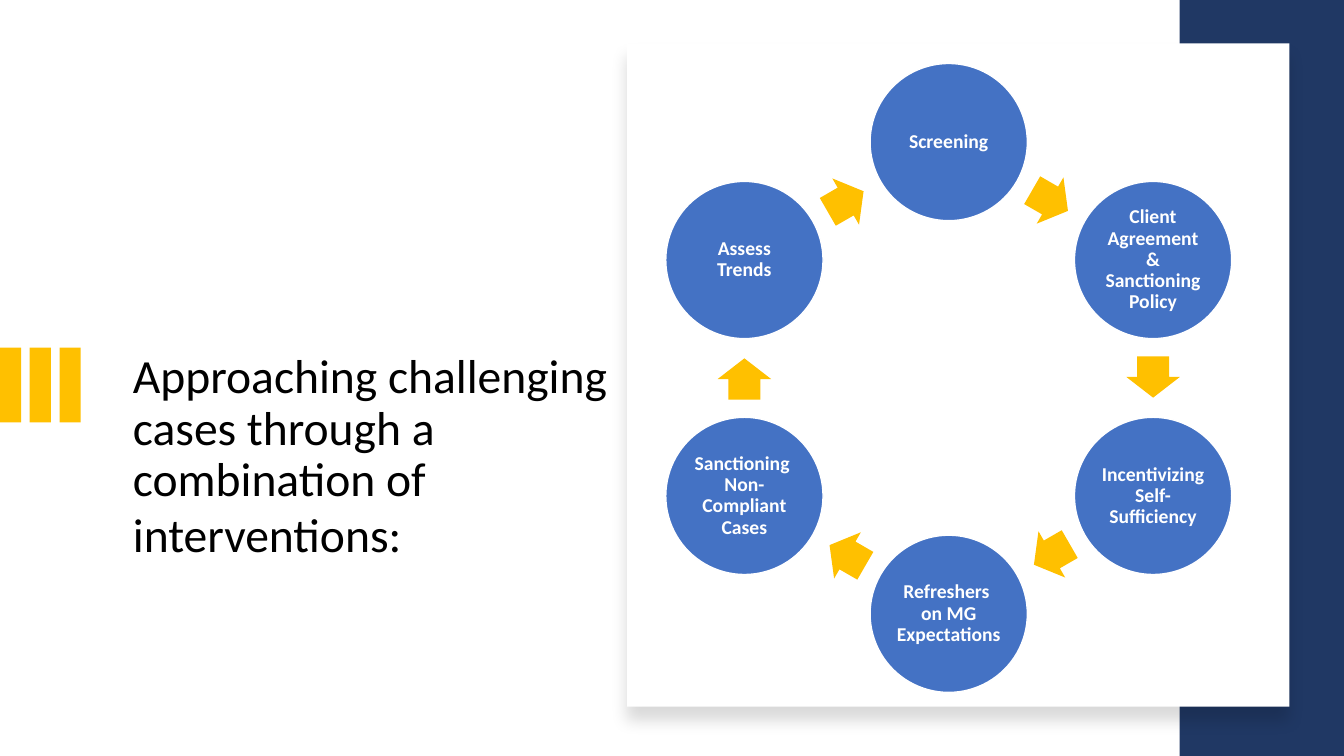
from dataclasses import dataclass
from math import cos, radians, sin

from lxml import etree
from pptx import Presentation
from pptx.dml.color import RGBColor
from pptx.enum.shapes import MSO_SHAPE
from pptx.enum.text import MSO_ANCHOR, PP_ALIGN
from pptx.oxml.ns import qn
from pptx.shapes.autoshape import Shape
from pptx.slide import Slide
from pptx.text.text import _Paragraph
from pptx.util import Inches, Pt

RECTANGLE = MSO_SHAPE.RECTANGLE
OVAL = MSO_SHAPE.OVAL
RIGHT_ARROW = MSO_SHAPE.RIGHT_ARROW
MIDDLE = MSO_ANCHOR.MIDDLE
TOP = MSO_ANCHOR.TOP
CENTER = PP_ALIGN.CENTER


@dataclass(frozen=True)
class Theme:
    font: str = "Calibri"
    white: str = "FFFFFF"
    black: str = "000000"
    navy: str = "203864"
    blue: str = "4472C4"
    gold: str = "FFC000"
    title_size: float = 34
    title_end_size: float = 38
    step_size: float = 14


@dataclass(frozen=True)
class Box:
    left: float
    top: float
    width: float
    height: float

    @classmethod
    def centered(cls, x: float, y: float, width: float, height: float) -> "Box":
        return cls(x - width / 2, y - height / 2, width, height)

    def lengths(self) -> tuple[int, int, int, int]:
        return (Inches(self.left), Inches(self.top),
                Inches(self.width), Inches(self.height))


@dataclass(frozen=True)
class Cycle:
    center_x: float
    center_y: float
    radius: float
    circle_size: float
    arrow_length: float
    arrow_width: float
    arrow_setback: float
    steps: tuple[str, ...]


THEME = Theme()
TITLE = "Approaching challenging cases through a combination of interventions:"
TITLE_END = " "
TITLE_BOX = Box(1.22, 3.45, 4.94, 2.59)
ACCENT_BARS = [Box(index * 0.295, 3.45, 0.21, 0.74) for index in range(3)]
SIDE_BAND = Box(11.7, 0, 1.63, 7.5)
CARD = Box(6.22, 0.43, 6.57, 6.58)
CYCLE = Cycle(
    center_x=9.41, center_y=3.75, radius=2.34, circle_size=1.56,
    arrow_length=0.41, arrow_width=0.53, arrow_setback=0.01,
    steps=(
        "Screening",
        "Client Agreement & Sanctioning Policy",
        "Incentivizing Self-Sufficiency",
        "Refreshers \non MG Expectations",
        "Sanctioning \nNon-Compliant Cases",
        "Assess Trends",
    ),
)


def add_filled_shape(page: Slide, kind: MSO_SHAPE, box: Box, color: str) -> Shape:
    shape = page.shapes.add_shape(kind, *box.lengths())
    shape.shadow.inherit = False
    shape.fill.solid()
    shape.fill.fore_color.rgb = RGBColor.from_string(color)
    shape.line.fill.background()
    return shape


def add_span(para: _Paragraph, text: str, size: float, color: str,
             bold: bool = False) -> None:
    span = para.add_run()
    span.text = text
    span.font.name = THEME.font
    span.font.size = Pt(size)
    span.font.bold = bold
    span.font.color.rgb = RGBColor.from_string(color)


def add_soft_shadow(shape: Shape) -> None:
    """Cast a faint black shadow straight down."""
    effects = shape._element.spPr.find(qn("a:effectLst"))
    shadow = etree.SubElement(effects, qn("a:outerShdw"), {
        "blurRad": str(Pt(11)), "dist": str(Pt(10)), "dir": "5400000",
        "algn": "t", "rotWithShape": "0"})
    color = etree.SubElement(shadow, qn("a:srgbClr"), {"val": THEME.black})
    etree.SubElement(color, qn("a:alpha"), {"val": "15000"})


def add_title(page: Slide) -> None:
    frame = page.shapes.add_textbox(*TITLE_BOX.lengths()).text_frame
    frame.word_wrap = True
    frame.vertical_anchor = TOP
    para = frame.paragraphs[0]
    para.line_spacing = 0.9
    add_span(para, TITLE, THEME.title_size, THEME.black)
    add_span(para, TITLE_END, THEME.title_end_size, THEME.black)


def add_step(page: Slide, box: Box, text: str) -> None:
    circle = add_filled_shape(page, OVAL, box, THEME.blue)
    circle.line.color.rgb = RGBColor.from_string(THEME.white)
    circle.line.width = Pt(1)
    frame = circle.text_frame
    frame.word_wrap = True
    frame.vertical_anchor = MIDDLE
    frame.margin_left = frame.margin_right = Inches(0.02)
    frame.margin_top = frame.margin_bottom = Inches(0.02)
    para = frame.paragraphs[0]
    para.alignment = CENTER
    para.line_spacing = 0.9
    for index, line in enumerate(text.split("\n")):
        if index:
            para.add_line_break()
        add_span(para, line, THEME.step_size, THEME.white, bold=True)


def add_arrow(page: Slide, box: Box, rotation: float) -> None:
    arrow = add_filled_shape(page, RIGHT_ARROW, box, THEME.gold)
    arrow.adjustments[0] = 0.6
    arrow.adjustments[1] = 0.5
    arrow.rotation = rotation


def add_cycle(page: Slide, cycle: Cycle) -> None:
    """Place the steps clockwise from the top, each followed by an arrow."""
    turn = 360 / len(cycle.steps)
    middle_radius = cycle.radius * cos(radians(turn / 2))
    for index, text in enumerate(cycle.steps):
        angle = radians(index * turn)
        add_step(page, Box.centered(
            cycle.center_x + cycle.radius * sin(angle),
            cycle.center_y - cycle.radius * cos(angle),
            cycle.circle_size, cycle.circle_size), text)

        heading = (index + 0.5) * turn
        angle = radians(heading)
        add_arrow(page, Box.centered(
            cycle.center_x + middle_radius * sin(angle) - cycle.arrow_setback * cos(angle),
            cycle.center_y - middle_radius * cos(angle) - cycle.arrow_setback * sin(angle),
            cycle.arrow_length, cycle.arrow_width), heading)


def main() -> None:
    deck = Presentation()
    deck.slide_width = Inches(13.33)
    deck.slide_height = Inches(7.5)
    page = deck.slides.add_slide(deck.slide_layouts[6])
    add_title(page)
    for bar in ACCENT_BARS:
        add_filled_shape(page, RECTANGLE, bar, THEME.gold)
    add_filled_shape(page, RECTANGLE, SIDE_BAND, THEME.navy)
    add_soft_shadow(add_filled_shape(page, RECTANGLE, CARD, THEME.white))
    add_cycle(page, CYCLE)
    deck.save("out.pptx")


if __name__ == "__main__":
    main()
